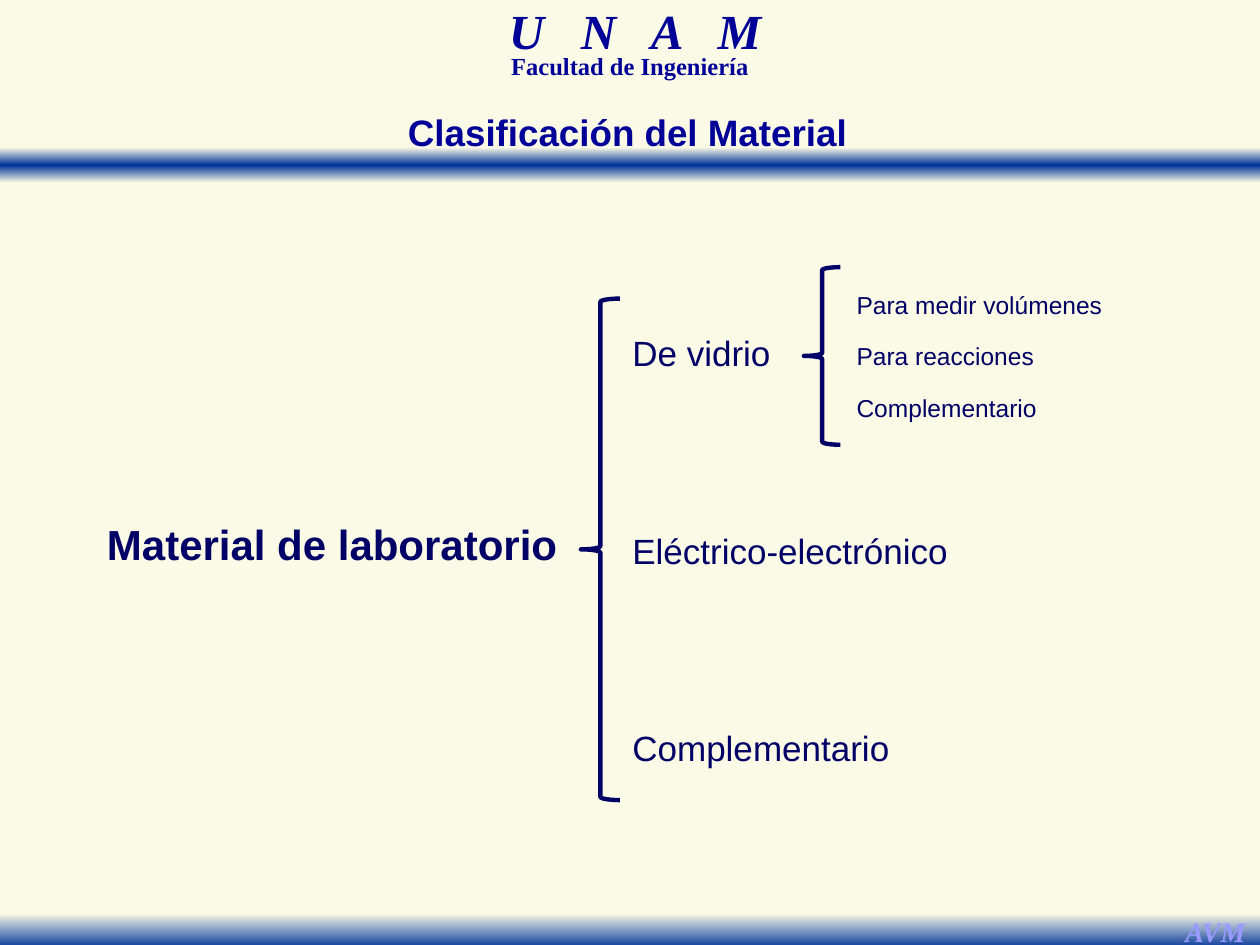
from copy import deepcopy
from dataclasses import dataclass

from pptx import Presentation
from pptx.dml.color import RGBColor
from pptx.enum.shapes import MSO_SHAPE as Shape
from pptx.enum.text import MSO_ANCHOR as Anchor, MSO_AUTO_SIZE as Fit, PP_ALIGN as Align
from pptx.util import Inches, Pt

CREAM, BLUE, NAVY, INK, LILAC = "FAFAE6", "003399", "000099", "000066", "9999FF"
SERIF, SANS = "Times New Roman", "Arial"


@dataclass
class Box:
    left: float
    top: float
    width: float
    height: float

    def lengths(self) -> list:
        return [Inches(n) for n in (self.left, self.top, self.width, self.height)]


@dataclass
class Style:
    size: float
    color: str = INK
    face: str = SANS
    bold: bool = False
    italic: bool = False


@dataclass
class Label:
    text: str
    box: Box
    style: Style


def rgb(code: str) -> RGBColor:
    return RGBColor.from_string(code)


def set_font(run, style: Style) -> None:
    font = run.font
    font.name, font.size = style.face, Pt(style.size)
    font.bold, font.italic = style.bold, style.italic
    font.color.rgb = rgb(style.color)


def add_label(slide, label: Label, wrap: bool = False):
    frame = slide.shapes.add_textbox(*label.box.lengths()).text_frame
    frame.word_wrap = wrap
    frame.text = label.text
    set_font(frame.paragraphs[0].runs[0], label.style)
    return frame.paragraphs[0]


def add_head(slide, label: Label):
    """Add a centred header line with tight line spacing."""
    par = add_label(slide, label, wrap=True)
    par.alignment, par.line_spacing = Align.CENTER, 0.7
    return par


def add_band(slide, box: Box, colors: list[str]) -> None:
    """Add a bar that fades evenly from top to bottom through the colours."""
    band = slide.shapes.add_shape(Shape.RECTANGLE, *box.lengths())
    band.shadow.inherit = False
    band.line.fill.background()
    band.fill.gradient()
    band.fill.gradient_angle = 270
    stops = band._element.xpath(".//a:gsLst")[0]
    while len(stops) < len(colors):
        stops.append(deepcopy(stops[0]))
    for i, (stop, color) in enumerate(zip(band.fill.gradient_stops, colors)):
        stop.position = i / (len(colors) - 1)
        stop.color.rgb = rgb(color)


def add_brace(slide, box: Box) -> None:
    brace = slide.shapes.add_shape(Shape.LEFT_BRACE, *box.lengths())
    brace.shadow.inherit = False
    brace.fill.background()
    brace.line.color.rgb = rgb(INK)
    brace.line.width = Pt(2.5)


def set_title(slide, label: Label) -> None:
    title = slide.shapes.title
    title.left, title.top, title.width, title.height = label.box.lengths()
    frame = title.text_frame
    frame.text = label.text
    frame.word_wrap, frame.auto_size = False, Fit.NONE
    frame.vertical_anchor = Anchor.MIDDLE
    frame.paragraphs[0].alignment = Align.CENTER
    set_font(frame.paragraphs[0].runs[0], label.style)


def add_list(slide, names: list[str], first: Box, step: float, style: Style) -> None:
    for i, name in enumerate(names):
        box = Box(first.left, first.top + i * step, first.width, first.height)
        add_label(slide, Label(name, box, style))


def main() -> None:
    deck = Presentation()
    deck.slide_width, deck.slide_height = Inches(10), Inches(7.5)
    slide = deck.slides.add_slide(deck.slide_layouts[5])
    slide.background.fill.solid()
    slide.background.fill.fore_color.rgb = rgb(CREAM)

    add_band(slide, Box(0, 1.17, 10, 0.28), [CREAM, BLUE, CREAM])
    add_band(slide, Box(0, 7.25, 10, 0.28), [CREAM, BLUE])

    school = add_head(slide, Label("U N A M", Box(3.08, 0.08, 3.92, 0.43),
                                   Style(28, NAVY, SERIF, True, True)))
    school.runs[0].font._element.set("spc", "700")
    add_head(slide, Label("Facultad de Ingeniería", Box(3.21, 0.42, 3.58, 0.26),
                          Style(14, NAVY, SERIF, True)))
    add_label(slide, Label("AVM", Box(9.31, 7.21, 0.69, 0.37),
                           Style(16, LILAC, SERIF, True, True)))
    set_title(slide, Label("Clasificación del Material", Box(3.12, 0.82, 3.72, 0.45),
                           Style(21, NAVY, bold=True)))

    add_label(slide, Label("Material de laboratorio", Box(0.75, 4.07, 3.81, 0.5),
                           Style(24, bold=True)))
    add_brace(slide, Box(4.61, 2.37, 0.31, 3.98))
    add_list(slide, ["De vidrio", "Eléctrico-electrónico", "Complementario"],
             Box(4.92, 2.58, 2.73, 0.44), 1.57, Style(20))
    add_brace(slide, Box(6.38, 2.12, 0.29, 1.41))
    add_list(slide, ["Para medir volúmenes", "Para reacciones", "Complementario"],
             Box(6.7, 2.25, 2.16, 0.34), 0.41, Style(14))

    deck.save("out.pptx")


if __name__ == "__main__":
    main()
